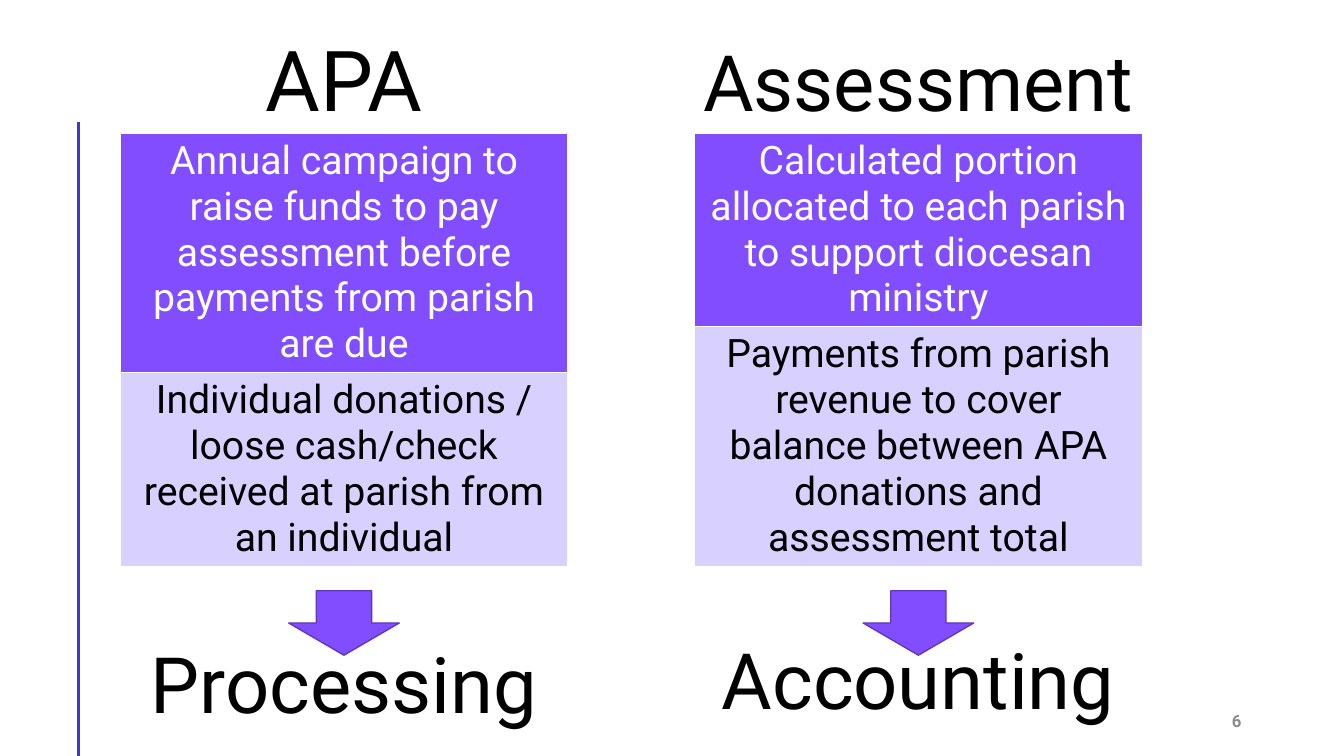
from dataclasses import dataclass

from lxml.etree import SubElement
from pptx import Presentation
from pptx.dml.color import RGBColor as RGB
from pptx.enum.shapes import MSO_CONNECTOR as Connector, MSO_SHAPE as Shape
from pptx.enum.text import MSO_ANCHOR as Anchor, MSO_AUTO_SIZE as AutoSize, PP_ALIGN as Align
from pptx.oxml import parse_xml
from pptx.oxml.ns import nsdecls, qn
from pptx.util import Pt


@dataclass(frozen=True)
class Theme:
    font: str = "Roboto"
    black: RGB = RGB(0x00, 0x00, 0x00)
    white: RGB = RGB(0xFF, 0xFF, 0xFF)
    gray: RGB = RGB(0x8C, 0x8C, 0x8C)
    purple: RGB = RGB(0x81, 0x4D, 0xFF)
    lilac: RGB = RGB(0xD8, 0xD0, 0xFF)
    outline: RGB = RGB(0x5F, 0x39, 0xBD)
    rule: RGB = RGB(0x38, 0x38, 0xDC)
    title: float = 60
    heading: float = 55.5
    body: float = 28
    number: float = 12


class SlideBuilder:
    def __init__(self, slide, theme):
        self.slide = slide
        self.shapes = slide.shapes
        self.theme = theme

    def style(self, p, size, color, align=Align.CENTER, bold=False):
        p.alignment = align
        f = p.font
        f.name, f.size, f.bold = self.theme.font, Pt(size), bold
        f.color.rgb = color

    def fill_text(self, sp, box, text, anchor):
        sp.left, sp.top, sp.width, sp.height = map(Pt, box)
        tf = sp.text_frame
        tf.text = text
        tf.word_wrap = True
        tf.auto_size = AutoSize.NONE
        tf.vertical_anchor = anchor
        return tf.paragraphs[0]

    def title(self, text, box):
        p = self.fill_text(self.shapes.title, box, text, Anchor.BOTTOM)
        self.style(p, self.theme.title, self.theme.black)
        p.line_spacing = 0.8

    def heading(self, text, box):
        sp = self.shapes.add_textbox(*map(Pt, box))
        p = self.fill_text(sp, box, text, Anchor.BOTTOM)
        self.style(p, self.theme.heading, self.theme.black)
        p.line_spacing = 0.9

    def number(self, text, box):
        sp = self.shapes.add_textbox(*map(Pt, box))
        p = self.fill_text(sp, box, text, Anchor.MIDDLE)
        self.style(p, self.theme.number, self.theme.gray, Align.RIGHT, bold=True)
        p.runs[0].font._element.set("spc", "100")

    def rule(self, x, top, bottom):
        line = self.shapes.add_connector(Connector.STRAIGHT, Pt(x), Pt(top), Pt(x), Pt(bottom))
        line.line.color.rgb = self.theme.rule
        line.line.width = Pt(2)
        SubElement(line._element.spPr, qn("a:effectLst"))

    def arrow(self, box):
        sp = self.shapes.add_shape(Shape.DOWN_ARROW, *map(Pt, box))
        sp.shadow.inherit = False
        sp.fill.solid()
        sp.fill.fore_color.rgb = self.theme.purple
        sp.line.color.rgb = self.theme.outline
        sp.line.width = Pt(1)

    def borders(self, cell):
        tc_pr = cell._tc.get_or_add_tcPr()
        for i, side in enumerate("LRTB"):
            tc_pr.insert(i, parse_xml(
                f'<a:ln{side} {nsdecls("a")} w="{Pt(1)}"><a:solidFill>'
                f'<a:srgbClr val="{self.theme.white}"/></a:solidFill></a:ln{side}>'))

    def table(self, left, top, width, rows):
        total = sum(height for _, height in rows)
        table = self.shapes.add_table(len(rows), 1, Pt(left), Pt(top), Pt(width), Pt(total)).table
        t = self.theme
        looks = [(t.purple, t.white), (t.lilac, t.black)]
        for i, ((text, height), (fill, color)) in enumerate(zip(rows, looks)):
            table.rows[i].height = Pt(height)
            cell = table.cell(i, 0)
            cell.text = text
            cell.fill.solid()
            cell.fill.fore_color.rgb = fill
            self.borders(cell)
            self.style(cell.text_frame.paragraphs[0], t.body, color)


COLUMN_WIDTH = 320
TABLE_TOP = 95
COLUMNS = [
    (85.7, "Processing", 456.5, [
        ("Annual campaign to raise funds to pay assessment before payments from parish are due", 170.5),
        ("Individual donations / loose cash/check received at parish from an individual", 138)]),
    (496, "Accounting", 453, [
        ("Calculated portion allocated to each parish to support diocesan ministry", 137.5),
        ("Payments from parish revenue to cover balance between APA donations and assessment total", 171)]),
]


def main():
    prs = Presentation()
    prs.slide_width, prs.slide_height = Pt(960), Pt(540)
    s = SlideBuilder(prs.slides.add_slide(prs.slide_layouts[5]), Theme())

    s.rule(56.2, 87.5, 540)
    s.title("APA", (85.7, 26, COLUMN_WIDTH, 69))
    s.heading("Assessment", (480, 18, 352, 77))
    for left, outcome, outcome_top, rows in COLUMNS:
        s.table(left, TABLE_TOP, COLUMN_WIDTH, rows)
        s.arrow((left + (COLUMN_WIDTH - 79) / 2, 422, 79, 46))
        s.heading(outcome, (left, outcome_top, COLUMN_WIDTH, 69))
    s.number("6", (678, 500.5, 216, 29))

    prs.save("out.pptx")


if __name__ == "__main__":
    main()
